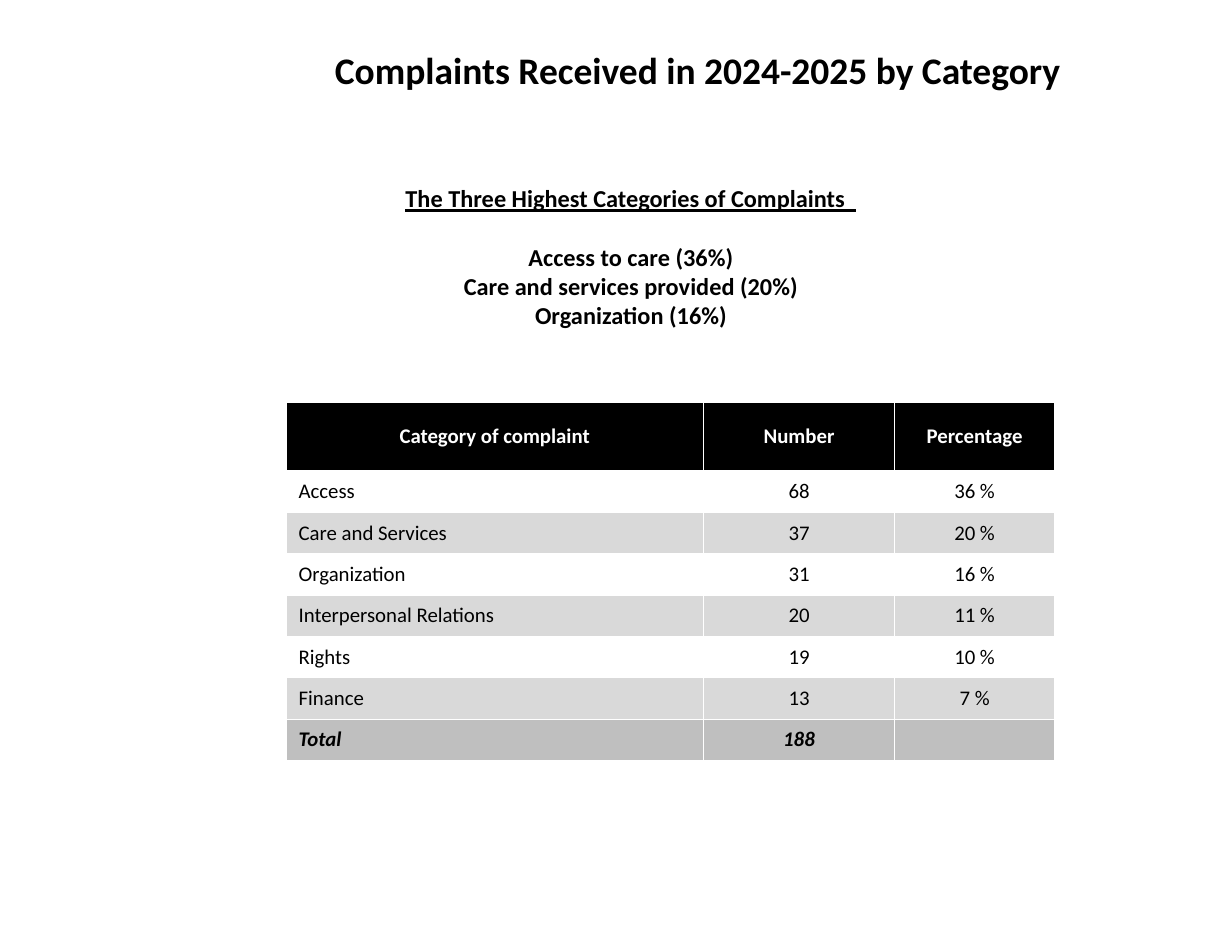
import pptx
import pptx.util
import pptx.dml.color
import pptx.enum.shapes
import pptx.enum.text
import pptx.oxml.ns
from lxml import etree

# Content
TITLE = "Complaints Received in 2024-2025 by Category"
HEADING = "The Three Highest Categories of Complaints  "
HIGHEST = ["Access to care (36%)", "Care and services provided (20%)", "Organization (16%)"]
ROWS = [
    ("Category of complaint", "Number", "Percentage"),
    ("Access", "68", "36 %"),
    ("Care and Services", "37", "20 %"),
    ("Organization", "31", "16 %"),
    ("Interpersonal Relations", "20", "11 %"),
    ("Rights", "19", "10 %"),
    ("Finance", "13", "7 %"),
    ("Total", "188", ""),
]
COLORS = {"black": "000000", "white": "FFFFFF", "band": "D9D9D9", "total": "BFBFBF"}

# Layout, in inches
SIZE = (9.86, 7.5)
TITLE_BOX = (1.72, 0.42, 7.73, 0.8)
HIGHEST_BOX = (3.22, 1.47, 3.66, 1.48)
TABLE_BOX = (2.29, 3.22, 6.15, 2.87)
COL_WIDTHS = (3.34, 1.53, 1.28)
HEAD_HEIGHT = 0.55
ROW_HEIGHT = (TABLE_BOX[3] - HEAD_HEIGHT) / (len(ROWS) - 1)

# Formats
TITLE_FONT = {"size": pptx.util.Pt(21.6), "bold": True}
HIGHEST_FONT = {"size": pptx.util.Pt(14), "bold": True}
CELL_FONT = {"size": pptx.util.Pt(12), "bold": False}
ALIGN = pptx.enum.text.PP_ALIGN
ANCHOR = pptx.enum.text.MSO_ANCHOR


def inches(values):
    return [pptx.util.Inches(v) for v in values]


def rgb(name):
    return pptx.dml.color.RGBColor.from_string(COLORS[name])


def write(p, text, font, color="black", align=ALIGN.CENTER):
    p.alignment = align
    r = p.add_run()
    r.text = text
    r.font.name = "Calibri"
    r.font.color.rgb = rgb(color)
    for key, value in font.items():
        setattr(r.font, key, value)


def top_frame(sp):
    tf = sp.text_frame
    settings = {"word_wrap": True, "vertical_anchor": ANCHOR.TOP, "margin_left": 0,
                "margin_right": 0, "margin_top": 0, "margin_bottom": 0}
    for key, value in settings.items():
        setattr(tf, key, value)
    return tf


def add_borders(cell):
    tcPr = cell._tc.get_or_add_tcPr()
    qn = pptx.oxml.ns.qn
    for i, side in enumerate(("a:lnL", "a:lnR", "a:lnT", "a:lnB")):
        ln = etree.Element(qn(side), w=str(pptx.util.Pt(0.75)))
        fill = etree.SubElement(ln, qn("a:solidFill"))
        etree.SubElement(fill, qn("a:srgbClr"), val=COLORS["white"])
        tcPr.insert(i, ln)


def row_style(i):
    if i == 0:
        return "black", "white", {"bold": True}
    if i == len(ROWS) - 1:
        return "total", "black", {"bold": True, "italic": True}
    return (None if i % 2 else "band"), "black", {}


def add_title(s):
    sp = s.shapes.title
    sp.left, sp.top, sp.width, sp.height = inches(TITLE_BOX)
    p = top_frame(sp).paragraphs[0]
    p.line_spacing = 0.9
    write(p, TITLE, TITLE_FONT)


def add_table(s):
    table = s.shapes.add_table(len(ROWS), len(COL_WIDTHS), *inches(TABLE_BOX)).table
    for column, width in zip(table.columns, inches(COL_WIDTHS)):
        column.width = width
    for i, texts in enumerate(ROWS):
        table.rows[i].height = pptx.util.Inches(ROW_HEIGHT if i else HEAD_HEIGHT)
        fill, color, font = row_style(i)
        for j, text in enumerate(texts):
            cell = table.cell(i, j)
            cell.vertical_anchor = ANCHOR.MIDDLE
            if fill:
                cell.fill.solid()
                cell.fill.fore_color.rgb = rgb(fill)
            else:
                cell.fill.background()
            add_borders(cell)
            p = cell.text_frame.paragraphs[0]
            if text:
                align = ALIGN.LEFT if i and j == 0 else ALIGN.CENTER
                write(p, text, {**CELL_FONT, **font}, color, align)
            else:
                # An empty cell keeps the row's text size
                etree.SubElement(p._p, pptx.oxml.ns.qn("a:endParaRPr"), sz="1200")


def add_highest(s):
    sp = s.shapes.add_shape(pptx.enum.shapes.MSO_SHAPE.RECTANGLE, *inches(HIGHEST_BOX))
    sp.shadow.inherit = False
    sp.fill.solid()
    sp.fill.fore_color.rgb = rgb("white")
    sp.line.fill.background()
    tf = top_frame(sp)
    write(tf.paragraphs[0], HEADING, {**HIGHEST_FONT, "underline": True})
    for i, text in enumerate(HIGHEST):
        p = tf.add_paragraph()
        if i == 0:
            p.space_before = pptx.util.Pt(17)
        write(p, text, HIGHEST_FONT)


def main():
    prs = pptx.Presentation()
    prs.slide_width, prs.slide_height = inches(SIZE)
    s = prs.slides.add_slide(prs.slide_layouts[5])
    add_title(s)
    add_table(s)
    add_highest(s)
    prs.save("out.pptx")


if __name__ == "__main__":
    main()
